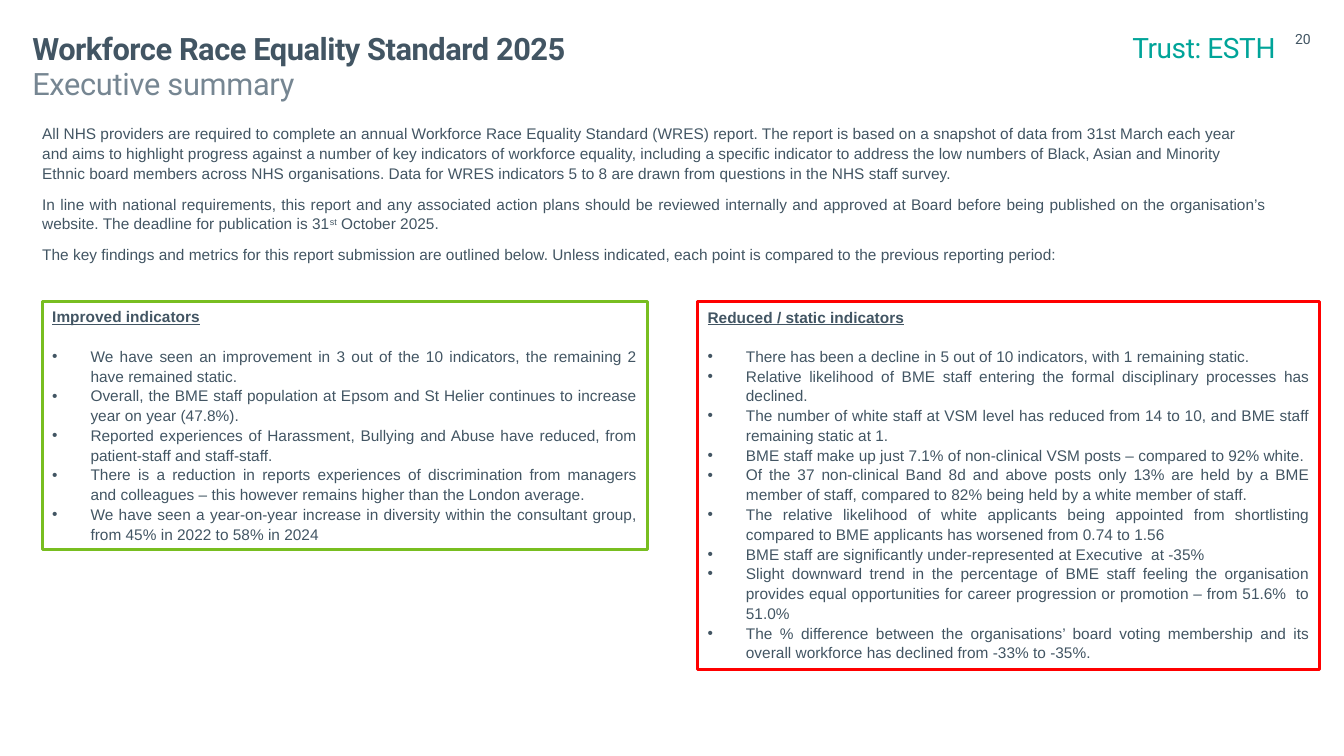
from pptx import Presentation
from pptx.dml.color import RGBColor
from pptx.enum.shapes import MSO_SHAPE
from pptx.enum.text import MSO_ANCHOR, MSO_AUTO_SIZE, PP_ALIGN as AL
from pptx.oxml.ns import qn
from pptx.util import Inches, Pt
from lxml import etree

SLATE = "425563"


def rgb(value):
    return RGBColor.from_string(value)


def add_run(p, text, size=11, font="Arial", color=SLATE, bold=False, spacing=0):
    r = p.add_run()
    r.text = text
    r.font.size = Pt(size)
    r.font.name = font
    r.font.color.rgb = rgb(color)
    r.font.bold = bold
    if spacing:
        r._r.get_or_add_rPr().set("spc", str(spacing))
    return r


prs = Presentation()
prs.slide_width, prs.slide_height = Inches(13.33), Inches(7.5)
s = prs.slides.add_slide(prs.slide_layouts[6])

# Title, subtitle, trust name and page number
header = [
    ("Workforce Race Equality Standard 2025", 0.32, 0.3, 7.01, 0.34, 22, SLATE, True, -30, AL.LEFT),
    ("Executive summary", 0.32, 0.64, 7.01, 0.51, 22, "768692", False, -20, AL.LEFT),
    ("Trust: ESTH", 10.75, 0.3, 1.9, 0.34, 20, "00A499", False, -30, AL.RIGHT),
    ("20", 12.67, 0.3, 0.33, 0.25, 10, SLATE, False, 0, AL.RIGHT),
]
for text, x, y, w, h, size, color, bold, spacing, align in header:
    tf = s.shapes.add_textbox(Inches(x), Inches(y), Inches(w), Inches(h)).text_frame
    tf.word_wrap = True
    tf.margin_left = tf.margin_right = tf.margin_top = tf.margin_bottom = 0
    p = tf.paragraphs[0]
    p.alignment = align
    add_run(p, text, size, "Roboto", color, bold, spacing)

# Introduction: each paragraph is a list of runs
intro = [
    (AL.LEFT, ["All NHS providers are required to complete an annual Workforce Race Equality Standard (WRES) report. "
               "The report is based on a snapshot of data from 31st March each year and aims to highlight progress "
               "against a number of key indicators of workforce equality, including a specific indicator to address "
               "the low numbers of Black, Asian and Minority Ethnic board members across NHS organisations. "
               "Data for WRES indicators 5 to 8 are drawn from questions in the NHS staff survey."]),
    (AL.JUSTIFY, ["In line with national requirements, this report and any associated action plans should be reviewed "
                  "internally and approved at Board before being published on the organisation’s website. "
                  "The deadline for publication is 31", "st", " October 2025."]),
    (AL.JUSTIFY, ["The key findings and metrics for this report submission are outlined below. "
                  "Unless indicated, each point is compared to the previous reporting period:"]),
]
tf = s.shapes.add_textbox(Inches(0.32), Inches(1.17), Inches(12.35), Inches(1.5)).text_frame
tf.word_wrap = True
tf.auto_size = MSO_AUTO_SIZE.SHAPE_TO_FIT_TEXT
for i, (align, runs) in enumerate(intro):
    p = tf.add_paragraph() if i else tf.paragraphs[0]
    p.alignment = align
    p.line_spacing = 1.07
    p.space_after = Pt(8)
    for text in runs:
        r = add_run(p, text)
        if text == "st":
            r._r.get_or_add_rPr().set("baseline", "30000")

# Indicator boxes
boxes = [
    ("Improved indicators", 0.42, 6, 2.46, "78BE20", [
        "We have seen an improvement in 3 out of the 10 indicators, the remaining 2 have remained static.",
        "Overall, the BME staff population at Epsom and St Helier continues to increase year on year (47.8%).",
        "Reported experiences of Harassment, Bullying and Abuse have reduced, from patient-staff and staff-staff.",
        "There is a reduction in reports experiences of discrimination from managers and colleagues "
        "– this however remains higher than the London average.",
        "We have seen a year-on-year increase in diversity within the consultant group, "
        "from 45% in 2022 to 58% in 2024",
    ]),
    ("Reduced / static indicators", 6.92, 6.17, 3.65, "FF0000", [
        "There has been a decline in 5 out of 10 indicators, with 1 remaining static.",
        "Relative likelihood of BME staff entering the formal disciplinary processes has declined.",
        "The number of white staff at VSM level has reduced from 14 to 10, and BME staff remaining static at 1.",
        "BME staff make up just 7.1% of non-clinical VSM posts – compared to 92% white.",
        "Of the 37 non-clinical Band 8d and above posts only 13% are held by a BME member of staff, "
        "compared to 82% being held by a white member of staff.",
        "The relative likelihood of white applicants being appointed from shortlisting "
        "compared to BME applicants has worsened from 0.74 to 1.56",
        "BME staff are significantly under-represented at Executive  at -35%",
        "Slight downward trend in the percentage of BME staff feeling the organisation provides "
        "equal opportunities for career progression or promotion – from 51.6%  to 51.0%",
        "The % difference between the organisations’ board voting membership "
        "and its overall workforce has declined from -33% to -35%.",
    ]),
]
for heading, x, w, h, color, points in boxes:
    sp = s.shapes.add_shape(MSO_SHAPE.RECTANGLE, Inches(x), Inches(2.99), Inches(w), Inches(h))
    sp.shadow.inherit = False
    sp.fill.solid()
    sp.fill.fore_color.rgb = rgb("FFFFFF")
    sp.line.color.rgb = rgb(color)
    sp.line.width = Pt(2)
    tf = sp.text_frame
    tf.word_wrap = True
    tf.auto_size = MSO_AUTO_SIZE.SHAPE_TO_FIT_TEXT
    tf.vertical_anchor = MSO_ANCHOR.TOP
    p = tf.paragraphs[0]
    p.alignment = AL.JUSTIFY
    p.line_spacing = 1.07
    p.space_after = Pt(14)
    add_run(p, heading, bold=True).font.underline = True
    for point in points:
        p = tf.add_paragraph()
        p.alignment = AL.JUSTIFY
        p.line_spacing = 1.07
        pPr = p._p.get_or_add_pPr()
        pPr.set("marL", str(Inches(0.38)))
        pPr.set("indent", str(-Inches(0.38)))
        etree.SubElement(pPr, qn("a:buFont")).set("typeface", "Arial")
        etree.SubElement(pPr, qn("a:buChar")).set("char", "•")
        add_run(p, point)

prs.save("out.pptx")
